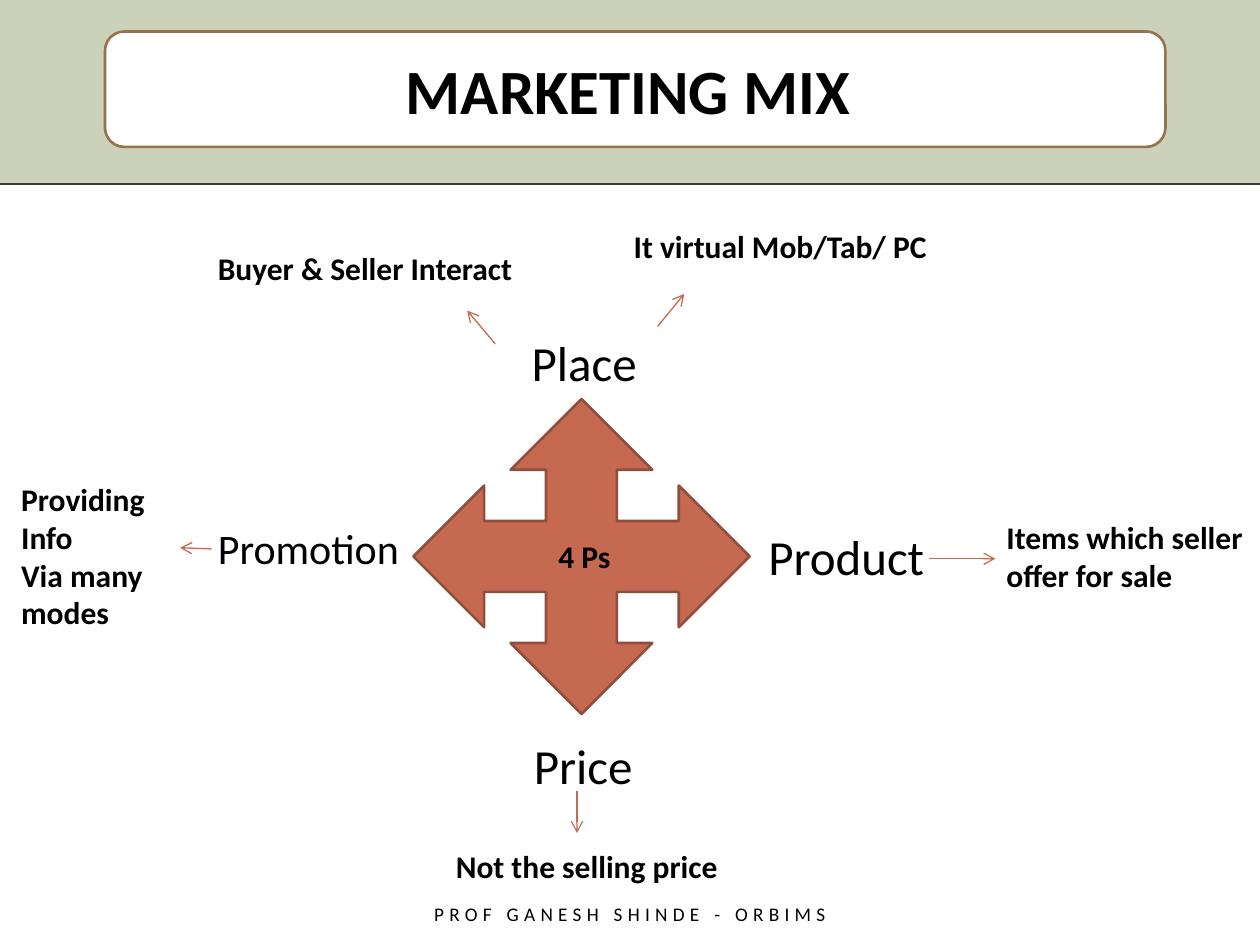
import pptx
import pptx.util
import pptx.dml.color
import pptx.enum.shapes
import pptx.enum.text
import pptx.oxml.ns
from lxml import etree

Pt = pptx.util.Pt
SHAPE = pptx.enum.shapes.MSO_SHAPE
ALIGN = pptx.enum.text.PP_ALIGN
ANCHOR = pptx.enum.text.MSO_ANCHOR
FIT = pptx.enum.text.MSO_AUTO_SIZE

COLORS = {"band": "CCD1B9", "white": "FFFFFF", "rule": "3E3737", "accent": "C66951",
          "accent_edge": "924E3C", "title_edge": "94734E", "text": "000000"}
FONT = "Calibri"
WIDTH, HEIGHT, BAND = 720, 540, 105.1

TITLE = "MARKETING MIX "
CENTER = "4 Ps "
FOOTER = "PROF GANESH SHINDE - ORBIMS"

LABELS = [
    ("Place ", (283, 186.5, 108, 41.2), {"size": 28, "align": ALIGN.CENTER}),
    ("Product", (432, 297.4, 110.9, 41.2), {"size": 28}),
    ("Price", (298, 416.9, 77.8, 41.2), {"size": 28}),
    ("Promotion", (117.4, 295.2, 118.8, 36), {"size": 24}),
]
NOTES = [
    ("It virtual Mob/Tab/ PC", (355, 126, 187.9, 29), False),
    ("Buyer & Seller Interact", (117.4, 139, 184.3, 29), False),
    ("Items which seller\noffer for sale", (568, 292.3, 154.8, 51), False),
    ("Not the selling price", (253.4, 480.2, 169.2, 29), False),
    ("Providing Info\nVia many modes", (5, 270.7, 118, 94.3), True),
]
ARROWS = [
    (375.8, 186.5, 391, 168),
    (283, 196.5, 267, 177.5),
    (531, 319.3, 568.8, 319.3),
    (329.7, 452.2, 329.7, 476),
    (121, 313.7, 103, 313),
]


def rgb(name):
    return pptx.dml.color.RGBColor.from_string(COLORS[name])


def put_text(sp, text, size=18, bold=False, align=ALIGN.LEFT, anchor=ANCHOR.TOP,
             wrap=True, fit=FIT.NONE, spacing=None):
    tf = sp.text_frame
    tf.word_wrap = wrap
    tf.auto_size = fit
    tf.vertical_anchor = anchor
    for i, line in enumerate(text.split("\n")):
        p = tf.add_paragraph() if i else tf.paragraphs[0]
        p.alignment = align
        r = p.add_run()
        r.text = line
        r.font.name = FONT
        r.font.size = Pt(size)
        r.font.bold = bold
        r.font.color.rgb = rgb("text")
        if spacing:
            r.font._element.set("spc", str(spacing * 100))


def add_text(shapes, text, box, **fmt):
    put_text(shapes.add_textbox(*map(Pt, box)), text, **fmt)


def add_shape(shapes, kind, box, fill, edge=None):
    sp = shapes.add_shape(kind, *map(Pt, box))
    sp.shadow.inherit = False
    sp.fill.solid()
    sp.fill.fore_color.rgb = rgb(fill)
    if edge:
        sp.line.color.rgb = rgb(edge)
        sp.line.width = Pt(1.5)
    else:
        sp.line.fill.background()
    return sp


def add_line(shapes, ends, color, width, arrow=False):
    line = shapes.add_connector(pptx.enum.shapes.MSO_CONNECTOR.STRAIGHT, *map(Pt, ends))
    line.line.color.rgb = rgb(color)
    line.line.width = Pt(width)
    qn = pptx.oxml.ns.qn
    props = line._element.spPr
    if arrow:
        etree.SubElement(props.find(qn("a:ln")), qn("a:tailEnd")).set("type", "arrow")
    etree.SubElement(props, qn("a:effectLst"))


def main():
    prs = pptx.Presentation()
    prs.slide_width, prs.slide_height = Pt(WIDTH), Pt(HEIGHT)
    s = prs.slides.add_slide(prs.slide_layouts[6])
    s.background.fill.solid()
    s.background.fill.fore_color.rgb = rgb("band")
    shapes = s.shapes

    add_shape(shapes, SHAPE.RECTANGLE, (0, BAND, WIDTH, HEIGHT - BAND), "white")
    add_line(shapes, (0, BAND, WIDTH, BAND), "rule", 1)
    add_shape(shapes, SHAPE.QUAD_ARROW, (236.2, 228, 192.2, 180), "accent", "accent_edge")
    add_text(shapes, CENTER, (288, 303.4, 96, 29), bold=True,
             align=ALIGN.CENTER, fit=FIT.SHAPE_TO_FIT_TEXT)

    for text, box, fmt in LABELS:
        add_text(shapes, text, box, wrap="align" in fmt, fit=FIT.SHAPE_TO_FIT_TEXT, **fmt)
    for text, box, wrap in NOTES:
        add_text(shapes, text, box, bold=True, wrap=wrap, fit=FIT.SHAPE_TO_FIT_TEXT)
    for ends in ARROWS:
        add_line(shapes, ends, "accent", 0.75, arrow=True)

    title = add_shape(shapes, SHAPE.ROUNDED_RECTANGLE, (60, 18, 606, 66), "white", "title_edge")
    put_text(title, TITLE, size=36, bold=True, align=ALIGN.CENTER, anchor=ANCHOR.MIDDLE)
    add_text(shapes, FOOTER, (114, 510.8, 492, 23), size=11, align=ALIGN.CENTER,
             anchor=ANCHOR.MIDDLE, spacing=3)
    prs.save("out.pptx")


if __name__ == "__main__":
    main()
